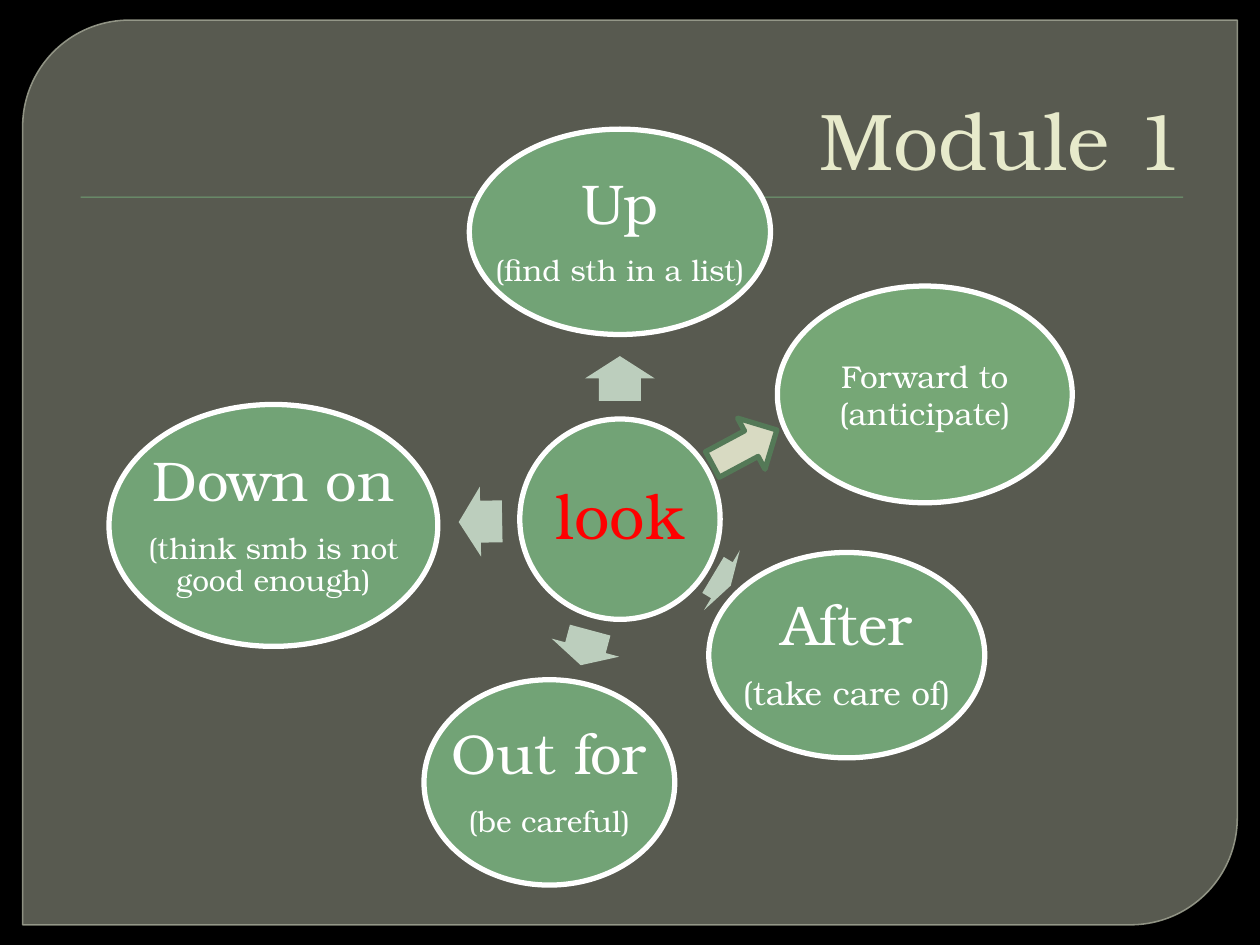
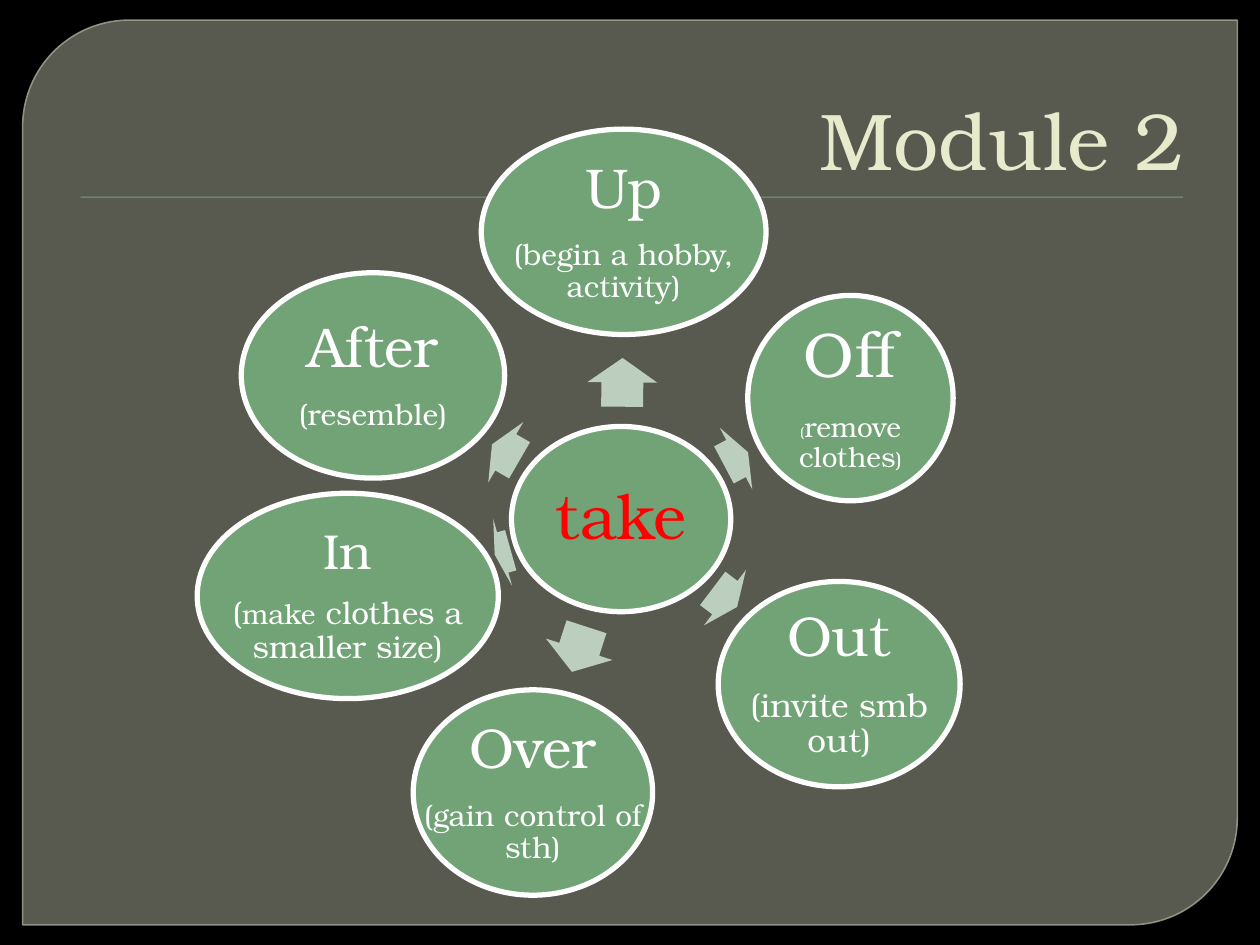
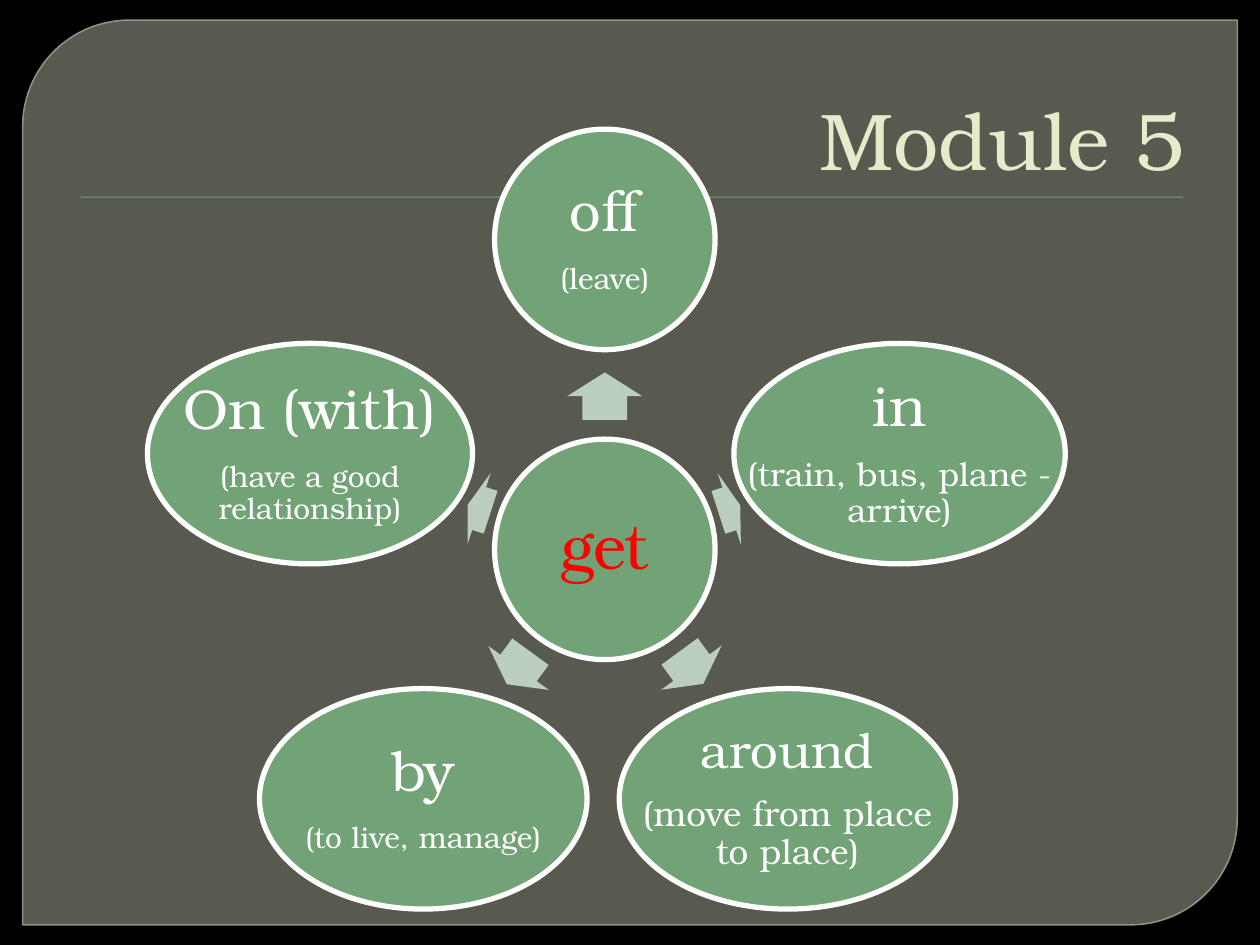
from collections import namedtuple
from math import atan2, cos, degrees, hypot, sin

from lxml.etree import SubElement
from pptx import Presentation
from pptx.dml.color import RGBColor
from pptx.enum.shapes import MSO_SHAPE
from pptx.enum.text import MSO_ANCHOR, PP_ALIGN
from pptx.oxml.ns import qn
from pptx.util import Inches, Pt

# The slide is a grid of 10 columns by 7.5 rows, one inch each.
COLUMNS, ROWS = 10, 7.5
FONT = "TeX Gyre Bonum"
COLORS = {
    "background": "000000", "panel": "888B7B", "panel_edge": "9DA090",
    "green": "72A376", "title": "E7EACB", "white": "FFFFFF", "keyword": "FF0000",
    "arrow": "BCCEBD", "added_green": "76A776", "added_arrow": "D8DAC2",
    "added_edge": "547957",
}

Box = namedtuple("Box", "left top width height")
# Offsets are measured from the centre of the hub to the centre of the part.
Hub = namedtuple("Hub", "word x y width height")
Satellite = namedtuple("Satellite", "x y width height particle size meaning")

MODULES = [
    ("Module 1", Hub("look", 4.92, 4.12, 1.59, 1.59), [
        Satellite(0, -2.28, 2.39, 1.63, "Up", 32, [("(find sth in a list)", 17)]),
        Satellite(1.8, 1.08, 2.19, 1.63, "After", 32, [("(take care of)", 19)]),
        Satellite(-0.56, 2.09, 1.99, 1.63, "Out for", 32, [("(be careful)", 17)]),
        Satellite(-2.75, 0.05, 2.61, 1.92, "Down on", 32,
                  [("(think smb is not good enough)", 17)]),
    ]),
    ("Module 2", Hub("take", 4.93, 4.12, 1.74, 1.47), [
        Satellite(0.02, -2.28, 2.26, 1.63, "Up", 32, [("(begin a hobby, activity)", 17)]),
        Satellite(1.82, -0.96, 1.63, 1.63, "Off", 36,
                  [("(", 8), ("remove", 16), (" ", 10), ("clothes", 16), (")", 12)]),
        Satellite(1.73, 1.31, 1.92, 1.63, "Out", 32, [("(invite smb out)", 19)]),
        Satellite(-0.7, 2.17, 1.9, 1.63, "Over", 32, [("(gain control of sth)", 17)]),
        Satellite(-2.17, 0.61, 2.39, 1.63, "In", 28,
                  [("(", 18), ("make", 16), (" clothes a smaller size)", 18)]),
        Satellite(-1.97, -1.14, 2.09, 1.63, "After", 32, [("(resemble)", 17)]),
    ]),
    ("Module 5", Hub("get", 4.8, 4.36, 1.75, 1.75), [
        Satellite(0, -2.46, 1.75, 1.75, "off", 32, [("(leave)", 17)]),
        Satellite(2.34, -0.76, 2.63, 1.75, "in", 32, [("(train, bus, plane - arrive)", 19)]),
        Satellite(1.45, 1.98, 2.67, 1.75, "around", 28, [("(move from place to place)", 20)]),
        Satellite(-1.44, 1.98, 2.6, 1.75, "by", 32, [("(to live, manage)", 17)]),
        Satellite(-2.34, -0.76, 2.58, 1.75, "On (with)", 32,
                  [("(have a good relationship)", 17)]),
    ]),
]


def color(name):
    return RGBColor.from_string(COLORS[name])


def inches(box):
    return [Inches(length) for length in box]


def centred(x, y, width, height):
    return Box(x - width / 2, y - height / 2, width, height)


def set_opacity(fill_owner, percent):
    for color_element in fill_owner.iter(qn("a:srgbClr")):
        SubElement(color_element, qn("a:alpha"), val=str(percent * 1000))


def add_preset(slide, kind, box, fill, edge=None, edge_width=3):
    shape = slide.shapes.add_shape(kind, *inches(box))
    shape.shadow.inherit = False
    shape.fill.solid()
    shape.fill.fore_color.rgb = color(fill)
    if edge:
        shape.line.color.rgb = color(edge)
        shape.line.width = Pt(edge_width)
    else:
        shape.line.fill.background()
    return shape


def write(frame, paragraphs, font_color, alignment=PP_ALIGN.CENTER, tight=False):
    """Fill a text frame; each paragraph is a list of (text, size) runs."""
    frame.word_wrap = True
    for index, runs in enumerate(paragraphs):
        paragraph = frame.paragraphs[0] if index == 0 else frame.add_paragraph()
        paragraph.alignment = alignment
        if tight:
            paragraph.line_spacing = 0.9
            space_after = SubElement(paragraph._p.get_or_add_pPr(), qn("a:spcAft"))
            SubElement(space_after, qn("a:spcPct"), val="35000")
        for text, size in runs:
            run = paragraph.add_run()
            run.text = text
            run.font.name = FONT
            run.font.size = Pt(size)
            run.font.color.rgb = color(font_color)


def add_frame(slide, title):
    """Background, rounded panel, rule and title shared by all slides."""
    slide.background.fill.solid()
    slide.background.fill.fore_color.rgb = color("background")
    panel = add_preset(slide, MSO_SHAPE.ROUND_2_DIAG_RECTANGLE,
                       Box(0.18, 0.16, COLUMNS - 0.36, ROWS - 0.32),
                       "panel", "panel_edge", 0.87)
    panel.adjustments[0] = 0.118
    panel.adjustments[1] = 0
    set_opacity(panel.fill._xPr.find(qn("a:solidFill")), 65)
    set_opacity(panel.line._ln, 88)
    add_preset(slide, MSO_SHAPE.RECTANGLE, Box(0.64, 1.56, 8.75, 0.01), "green")

    title_box = slide.shapes.add_textbox(*inches(Box(0.5, 0.28, COLUMNS - 1, 1.25)))
    title_box.text_frame.vertical_anchor = MSO_ANCHOR.BOTTOM
    write(title_box.text_frame, [[(title, 46)]], "title", PP_ALIGN.RIGHT)


def add_bubble(slide, box, paragraphs, font_color="white"):
    """Ellipse with text that may use the full width of its box."""
    add_preset(slide, MSO_SHAPE.OVAL, box, "green", "white")
    frame = slide.shapes.add_textbox(*inches(box)).text_frame
    frame.margin_left = frame.margin_right = Inches(0.04)
    frame.margin_top = frame.margin_bottom = Inches(0.04)
    frame.vertical_anchor = MSO_ANCHOR.MIDDLE
    write(frame, paragraphs, font_color, tight=True)


def radius_towards(part, angle):
    return 1 / hypot(2 * cos(angle) / part.width, 2 * sin(angle) / part.height)


def add_spoke(slide, hub, satellite, thickness):
    """Arrow that fills about half of the gap between hub and satellite."""
    angle = atan2(satellite.y, satellite.x)
    hub_radius = radius_towards(hub, angle)
    gap = (hypot(satellite.x, satellite.y) - hub_radius
           - radius_towards(satellite, angle))
    distance = hub_radius + 0.48 * gap
    box = centred(hub.x + distance * cos(angle), hub.y + distance * sin(angle),
                  0.53 * gap, thickness)
    arrow = add_preset(slide, MSO_SHAPE.RIGHT_ARROW, box, "arrow")
    arrow.adjustments[0] = 0.6
    arrow.rotation = degrees(angle) % 360


def add_wheel(slide, hub, satellites):
    add_bubble(slide, centred(hub.x, hub.y, hub.width, hub.height),
               [[(hub.word, 36)]], "keyword")
    thickness = 0.34 * satellites[0].height
    for satellite in satellites:
        add_spoke(slide, hub, satellite, thickness)
        box = centred(hub.x + satellite.x, hub.y + satellite.y,
                      satellite.width, satellite.height)
        add_bubble(slide, box,
                   [[(satellite.particle, satellite.size)], satellite.meaning])


def add_extra_meaning(slide, hub):
    """Separate ellipse and outlined arrow at the upper right of the hub."""
    ellipse = add_preset(slide, MSO_SHAPE.OVAL,
                         centred(hub.x + 2.42, hub.y - 0.99, 2.34, 1.72),
                         "added_green", "white")
    ellipse.text_frame.vertical_anchor = MSO_ANCHOR.MIDDLE
    write(ellipse.text_frame, [[("Forward to", 18)], [("(anticipate)", 18)]], "white")
    arrow = add_preset(slide, MSO_SHAPE.RIGHT_ARROW,
                       centred(hub.x + 0.99, hub.y - 0.57, 0.58, 0.46),
                       "added_arrow", "added_edge")
    arrow.rotation = 331.8


def main():
    presentation = Presentation()
    presentation.slide_width = Inches(COLUMNS)
    presentation.slide_height = Inches(ROWS)
    for title, hub, satellites in MODULES:
        slide = presentation.slides.add_slide(presentation.slide_layouts[6])
        add_frame(slide, title)
        add_wheel(slide, hub, satellites)
        if hub.word == "look":
            add_extra_meaning(slide, hub)
    presentation.save("out.pptx")


if __name__ == "__main__":
    main()
